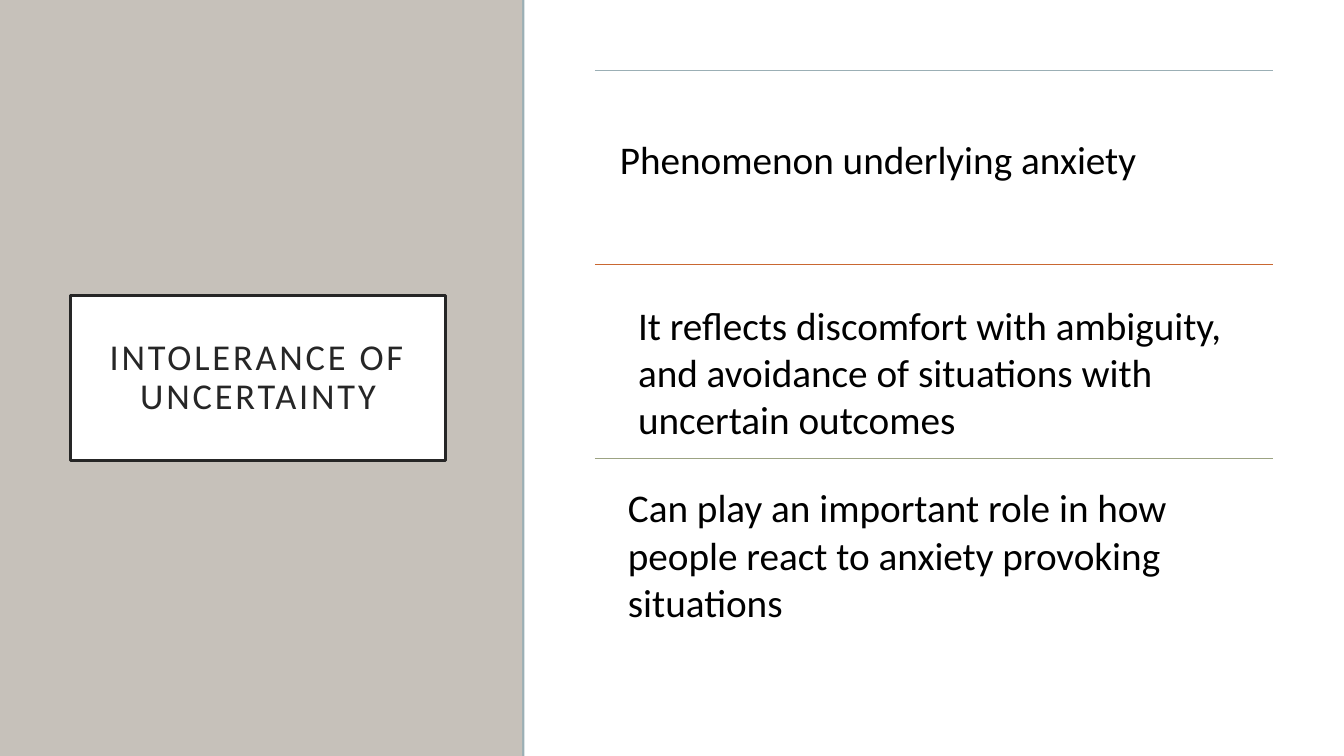
from dataclasses import dataclass

from lxml import etree
from pptx import Presentation
from pptx.dml.color import RGBColor
from pptx.enum.shapes import MSO_CONNECTOR, MSO_SHAPE
from pptx.enum.text import MSO_ANCHOR, PP_ALIGN
from pptx.oxml.ns import qn
from pptx.util import Inches, Pt

RECTANGLE = MSO_SHAPE.RECTANGLE
STRAIGHT = MSO_CONNECTOR.STRAIGHT
MIDDLE = MSO_ANCHOR.MIDDLE
CENTER = PP_ALIGN.CENTER


@dataclass(frozen=True)
class Theme:
    """Colours, font and type sizes of the slide."""
    font: str = "Calibri"
    title_size: float = 26
    body_size: float = 28
    title_spacing: float = 2
    frame_width: float = 2.5
    rule_width: float = 1
    white: str = "FFFFFF"
    black: str = "000000"
    ink: str = "262626"
    sand: str = "C6C1BA"
    slate: str = "9BAFB5"
    rust: str = "C96731"
    sage: str = "9CA383"


THEME = Theme()

POINTS = [
    ("Phenomenon underlying anxiety", THEME.slate, (0.15, 0.59, 6.5, 0.88)),
    ("It reflects discomfort with ambiguity, and avoidance of situations "
     "with uncertain outcomes", THEME.rust, (0.33, 0.31, 6.24, 1.82)),
    ("Can play an important role in how people react to anxiety provoking "
     "situations", THEME.sage, (0.23, 0.2, 6.33, 1.82)),
]


def add_panel(slide, box, fill):
    """Add a plain filled rectangle and return it."""
    panel = slide.shapes.add_shape(RECTANGLE, *map(Inches, box))
    panel.shadow.inherit = False
    panel.fill.solid()
    panel.fill.fore_color.rgb = RGBColor.from_string(fill)
    panel.line.fill.background()
    return panel


def add_rule(slide, left, top, width, color):
    """Add a thin horizontal rule without shadow."""
    rule = slide.shapes.add_connector(
        STRAIGHT, Inches(left), Inches(top), Inches(left + width), Inches(top))
    rule.line.color.rgb = RGBColor.from_string(color)
    rule.line.width = Pt(THEME.rule_width)
    etree.SubElement(rule._element.spPr, qn("a:effectLst"))


def write(frame, text, size, color):
    """Put one wrapped paragraph in a text frame and return the paragraph."""
    frame.word_wrap = True
    frame.text = text
    paragraph = frame.paragraphs[0]
    font = paragraph.runs[0].font
    font.name = THEME.font
    font.size = Pt(size)
    font.color.rgb = RGBColor.from_string(color)
    return paragraph


def add_title_side(slide, box):
    """Build the sand panel with the framed title."""
    left, top, width, height = box
    add_panel(slide, box, THEME.sand)
    title = add_panel(slide, (left + 0.7, top + 2.93, 3.72, 1.64), THEME.white)
    title.line.color.rgb = RGBColor.from_string(THEME.ink)
    title.line.width = Pt(THEME.frame_width)
    frame = title.text_frame
    frame.vertical_anchor = MIDDLE
    frame.margin_left = frame.margin_right = Inches(0.2)
    frame.margin_top = frame.margin_bottom = Inches(0.2)
    heading = write(frame, "INTOLERANCE OF UNCERTAINTY", THEME.title_size, THEME.ink)
    heading.alignment = CENTER
    heading.line_spacing = 0.9
    heading.runs[0].font._element.set("spc", str(int(THEME.title_spacing * 100)))


def add_points_side(slide, box):
    """Build the white panel with a rule above each point."""
    left, top, width, height = box
    add_panel(slide, box, THEME.white)
    rule_left, first_rule, pitch = left + 0.7, top + 0.7, 1.925
    for index, (text, color, (dx, dy, text_width, text_height)) in enumerate(POINTS):
        rule_top = first_rule + index * pitch
        add_rule(slide, rule_left, rule_top, 6.73, color)
        point = slide.shapes.add_textbox(
            Inches(rule_left + dx), Inches(rule_top + dy),
            Inches(text_width), Inches(text_height))
        write(point.text_frame, text, THEME.body_size, THEME.black)


def main():
    """Build the slide and save it."""
    deck = Presentation()
    deck.slide_width, deck.slide_height = Inches(13.33), Inches(7.5)
    slide = deck.slides.add_slide(deck.slide_layouts[6])
    add_panel(slide, (0, 0, 6.67, 7.5), THEME.slate)
    add_title_side(slide, (0, 0, 5.18, 7.5))
    add_points_side(slide, (5.2, 0, 8.13, 7.5))
    deck.save("out.pptx")


if __name__ == "__main__":
    main()
